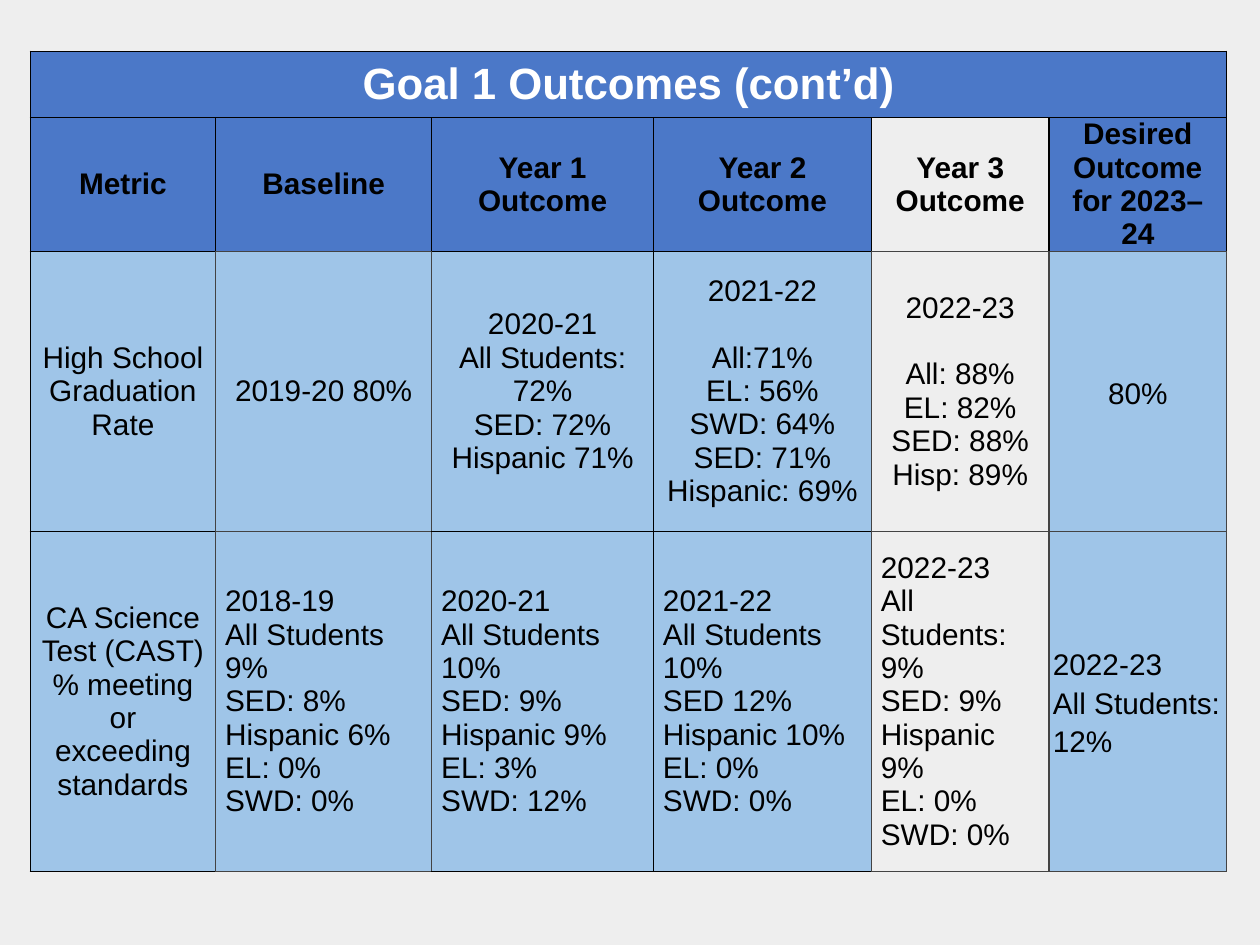
from dataclasses import dataclass

from lxml import etree
from pptx import Presentation
from pptx import util as u
from pptx.dml.color import RGBColor
from pptx.enum import text
from pptx.oxml.ns import qn


@dataclass(frozen=True)
class Theme:
    font: str = "Arial"
    title_size: float = 25
    text_size: float = 17
    background: str = "EEEEEE"
    header: str = "4B78C8"
    body: str = "9FC5E8"
    ink: str = "000000"
    title_ink: str = "FFFFFF"
    soft_line: str = "434343"
    line_width: float = 0.75
    year_gap: float = 19


COL_WIDTHS = [106, 123.5, 126.75, 124.5, 101.5, 101.5]
ROW_HEIGHTS = [38, 57, 160, 194.5]
YEAR_3, DESIRED = 4, 5
SOFT_COLS = {1, YEAR_3, DESIRED}
FIRST_BODY_ROW = 2
GRADUATION, SCIENCE = 2, 3

TITLE = "Goal 1 Outcomes (cont’d)"
HEADERS = ["Metric", "Baseline", "Year 1 Outcome", "Year 2 Outcome",
           "Year 3 Outcome", "Desired Outcome for 2023–24"]
GRADUATION_RATE = [
    ["High School Graduation Rate"],
    ["2019-20 80%"],
    ["2020-21", "All Students: 72%", "SED: 72%", "Hispanic 71%"],
    ["2021-22", "All:71%", "EL: 56%", "SWD: 64%", "SED: 71%", "Hispanic: 69%"],
    ["2022-23", "All: 88%", "EL: 82%", "SED: 88%", "Hisp: 89%"],
    ["80%"],
]
SCIENCE_TEST = [
    ["CA Science Test (CAST) % meeting or exceeding standards"],
    ["2018-19", "All Students 9%", "SED: 8%", "Hispanic 6%", "EL: 0%", "SWD: 0%"],
    ["2020-21", "All Students 10%", "SED: 9% Hispanic 9%", "EL: 3%", "SWD: 12%"],
    ["2021-22", "All Students 10%", "SED 12% Hispanic 10%", "EL: 0%", "SWD: 0%"],
    ["2022-23", "All Students: 9%", "SED: 9%", "Hispanic 9%", "EL: 0%", "SWD: 0%"],
    ["2022-23", "All Students: 12%"],
]


def is_soft(row, col):
    return row >= FIRST_BODY_ROW and col in SOFT_COLS


class Deck:
    def __init__(self, theme):
        self.theme = theme
        self.prs = Presentation()
        self.prs.slide_width, self.prs.slide_height = u.Pt(720), u.Pt(540)
        self.s = None

    def slide(self):
        self.s = self.prs.slides.add_slide(self.prs.slide_layouts[6])
        fill = self.s.background.fill
        fill.solid()
        fill.fore_color.rgb = RGBColor.from_string(self.theme.background)

    def table(self, left, top, widths, heights):
        frame = self.s.shapes.add_table(
            len(heights), len(widths), u.Pt(left), u.Pt(top),
            u.Pt(sum(widths)), u.Pt(sum(heights)))
        tbl = frame.table
        for col, width in zip(tbl.columns, widths):
            col.width = u.Pt(width)
        for row, height in zip(tbl.rows, heights):
            row.height = u.Pt(height)
        return tbl

    def borders(self, cell, row, col):
        """Draw the four edges; an edge is soft when either cell beside it is."""
        neighbours = {"lnL": (row, col - 1), "lnR": (row, col + 1),
                      "lnT": (row - 1, col), "lnB": (row + 1, col)}
        tc_pr = cell._tc.get_or_add_tcPr()
        for tag, neighbour in neighbours.items():
            soft = is_soft(row, col) or is_soft(*neighbour)
            ln = etree.SubElement(tc_pr, qn(f"a:{tag}"),
                                  w=str(u.Pt(self.theme.line_width)))
            fill = etree.SubElement(ln, qn("a:solidFill"))
            etree.SubElement(fill, qn("a:srgbClr"),
                             val=self.theme.soft_line if soft else self.theme.ink)

    def style_cell(self, cell, row, col, fill, side=5.4, vertical=0):
        self.borders(cell, row, col)
        cell.fill.solid()
        cell.fill.fore_color.rgb = RGBColor.from_string(fill)
        formats = {"vertical_anchor": text.MSO_ANCHOR.MIDDLE,
                   "margin_left": u.Pt(side), "margin_right": u.Pt(side),
                   "margin_top": u.Pt(vertical), "margin_bottom": u.Pt(vertical)}
        for name, value in formats.items():
            setattr(cell, name, value)

    def cell_text(self, cell, lines, size=None, color=None, bold=False,
                  centred=True, spacing=1.0, year_gap=0):
        """Add one paragraph per line, with year_gap below the first."""
        tf = cell.text_frame
        formats = {"name": self.theme.font, "bold": bold,
                   "size": u.Pt(size or self.theme.text_size)}
        for i, line in enumerate(lines):
            p = tf.add_paragraph() if i else tf.paragraphs[0]
            p.alignment = text.PP_ALIGN.CENTER if centred else text.PP_ALIGN.LEFT
            p.line_spacing = spacing
            p.space_before = u.Pt(year_gap if i == 1 else 0)
            r = p.add_run()
            r.text = line
            for name, value in formats.items():
                setattr(r.font, name, value)
            r.font.color.rgb = RGBColor.from_string(color or self.theme.ink)


def main():
    theme = Theme()
    deck = Deck(theme)
    deck.slide()
    tbl = deck.table(17.25, 29.25, COL_WIDTHS, ROW_HEIGHTS)

    for col in range(len(COL_WIDTHS)):
        deck.style_cell(tbl.cell(0, col), 0, col, theme.header)
    title = tbl.cell(0, 0)
    title.merge(tbl.cell(0, len(COL_WIDTHS) - 1))
    deck.cell_text(title, [TITLE], theme.title_size, theme.title_ink, bold=True)

    for col, header in enumerate(HEADERS):
        cell = tbl.cell(1, col)
        fill = theme.background if col == YEAR_3 else theme.header
        deck.style_cell(cell, 1, col, fill)
        deck.cell_text(cell, [header], bold=True)

    for row, outcomes in ((GRADUATION, GRADUATION_RATE), (SCIENCE, SCIENCE_TEST)):
        for col, lines in enumerate(outcomes):
            cell = tbl.cell(row, col)
            desired = col == DESIRED
            fill = theme.background if col == YEAR_3 else theme.body
            insets = {"side": 2.2, "vertical": 7.2} if desired else {}
            gapped = row == GRADUATION and col in (3, YEAR_3)
            deck.style_cell(cell, row, col, fill, **insets)
            deck.cell_text(cell, lines, centred=row == GRADUATION or col == 0,
                           spacing=1.15 if desired else 1.0,
                           year_gap=theme.year_gap if gapped else 0)

    deck.prs.save("out.pptx")


if __name__ == "__main__":
    main()
